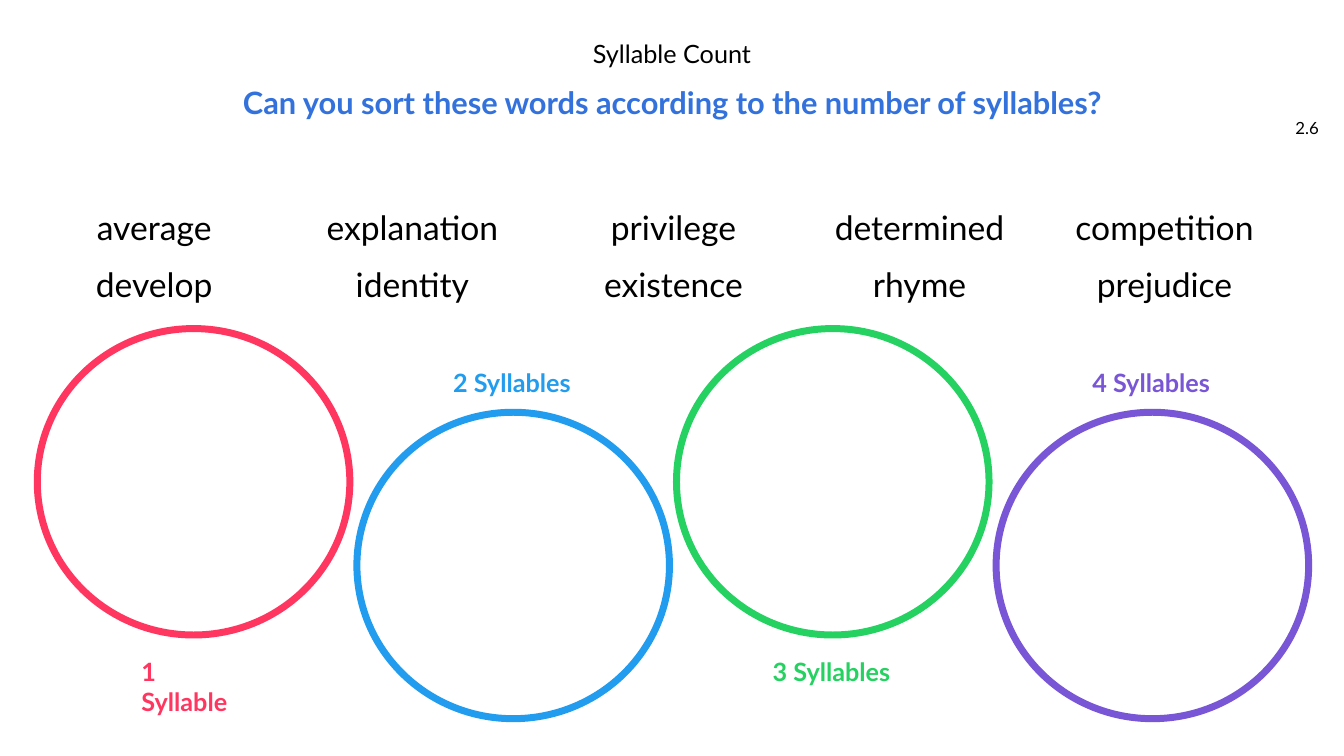
from pptx import Presentation
from pptx.dml.color import RGBColor
from pptx.enum import shapes, text
from pptx.util import Inches, Pt

COLORS = {"black": "000000", "question": "3372DC", "red": "FF3760",
          "blue": "219CEE", "green": "25D160", "purple": "7956D6"}

TITLE = "Syllable Count"
QUESTION = "Can you sort these words according to the number of syllables?"
PAGE_NUMBER = "2.6"
WORD_ROWS = [
    ("average", "explanation", "privilege", "determined", "competition"),
    ("develop", "identity", "existence", "rhyme", "prejudice"),
]
WORD_CENTERS = (1.53, 4.09, 6.68, 9.12, 11.55)
# label, colour, label width
GROUPS = [("1 Syllable", "red", 1.23), ("2 Syllables", "blue", 1.39),
          ("3 Syllables", "green", 1.39), ("4 Syllables", "purple", 1.39)]

WORD_TOP, WORD_STEP, WORD_WIDTH, WORD_HEIGHT = 2.03, 0.57, 2.4, 0.47
CIRCLE_LEFT, CIRCLE_STEP, CIRCLE_WIDTH, CIRCLE_HEIGHT = 0.37, 3.17, 3.1, 3.04
# circle top, label top: raised and lowered circles alternate
LEVELS = [(3.26, 6.46), (4.09, 3.59)]

deck = Presentation()
deck.slide_width, deck.slide_height = Inches(13.33), Inches(7.5)
page = deck.slides.add_slide(deck.slide_layouts[5])


def write(box, words, size, color="black", bold=False, align="CENTER",
          anchor="MIDDLE", spacing=None):
    frame = box.text_frame
    settings = {"word_wrap": True, "auto_size": text.MSO_AUTO_SIZE.NONE,
                "vertical_anchor": getattr(text.MSO_ANCHOR, anchor)}
    for name, value in settings.items():
        setattr(frame, name, value)
    para = frame.paragraphs[0]
    para.alignment = getattr(text.PP_ALIGN, align)
    para.space_before = Pt(0)
    if spacing:
        para.line_spacing = spacing
    span = para.add_run()
    span.text = words
    for name, value in {"name": "Lato", "size": Pt(size), "bold": bold}.items():
        setattr(span.font, name, value)
    span.font.color.rgb = RGBColor.from_string(COLORS[color])


def add_text(left, top, width, height, words, size, **style):
    box = page.shapes.add_textbox(*map(Inches, (left, top, width, height)))
    write(box, words, size, **style)


# Heading
title = page.shapes.title
title.left, title.top = Inches(3.82), Inches(0.37)
title.width, title.height = Inches(5.69), Inches(0.35)
write(title, TITLE, 18, spacing=0.9)
add_text(2.09, 0.84, 9.16, 0.4, QUESTION, 22,
         color="question", bold=True, spacing=0.9)
add_text(12.55, 1.07, 0.63, 0.4, PAGE_NUMBER, 12, align="RIGHT")

# Words to sort
for row, words in enumerate(WORD_ROWS):
    for center, word in zip(WORD_CENTERS, words):
        add_text(center - WORD_WIDTH / 2, WORD_TOP + row * WORD_STEP,
                 WORD_WIDTH, WORD_HEIGHT, word, 24, spacing=Pt(27))

# Sorting circles with their labels
for index, (label, color, label_width) in enumerate(GROUPS):
    circle_top, label_top = LEVELS[index % 2]
    left = CIRCLE_LEFT + index * CIRCLE_STEP
    circle = page.shapes.add_shape(
        shapes.MSO_SHAPE.OVAL, Inches(left), Inches(circle_top),
        Inches(CIRCLE_WIDTH), Inches(CIRCLE_HEIGHT))
    circle.shadow.inherit = False
    circle.fill.background()
    circle.line.color.rgb = RGBColor.from_string(COLORS[color])
    circle.line.width = Pt(5)
    add_text(left + (CIRCLE_WIDTH - label_width) / 2, label_top, label_width,
             0.4, label, 18, color=color, bold=True, align="LEFT", anchor="TOP")

deck.save("out.pptx")
